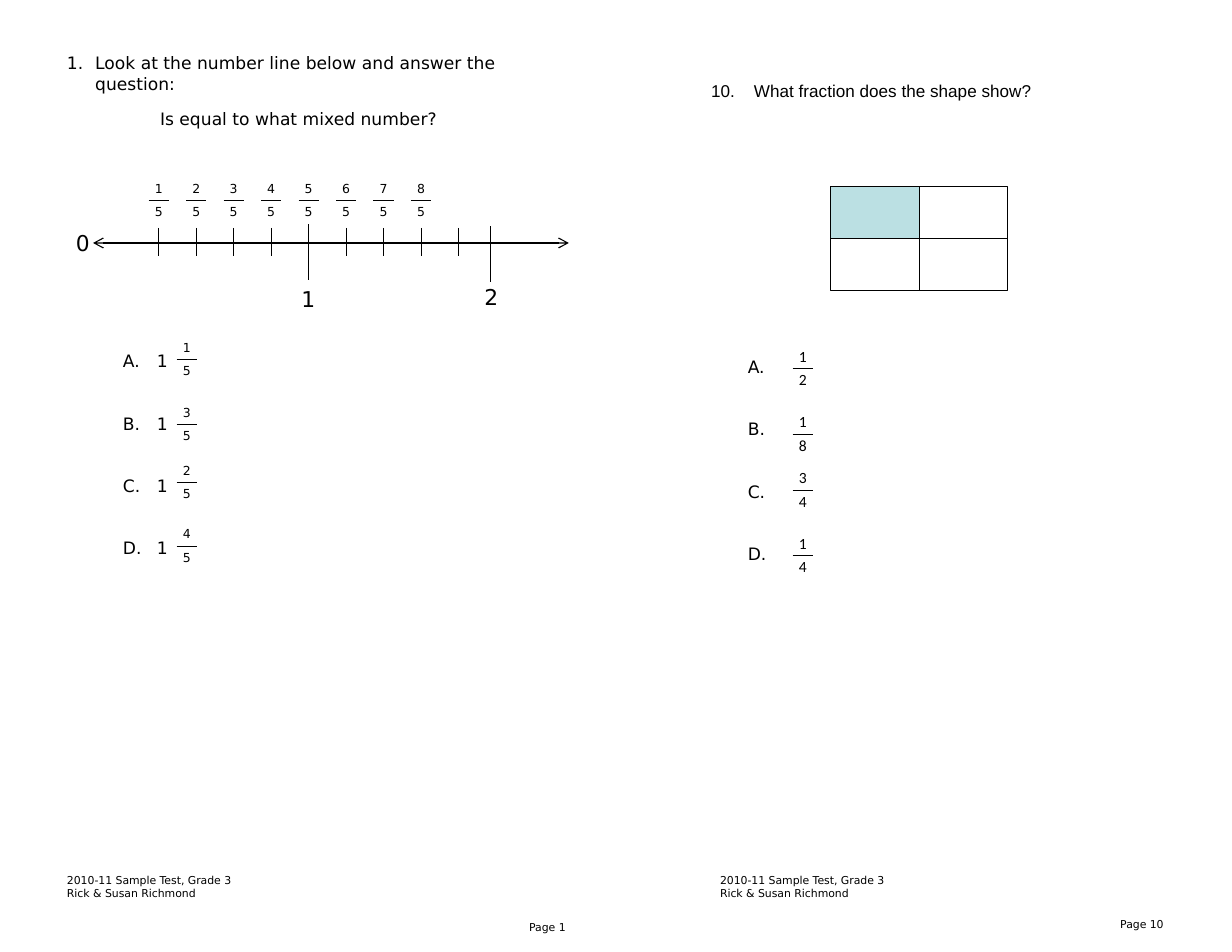
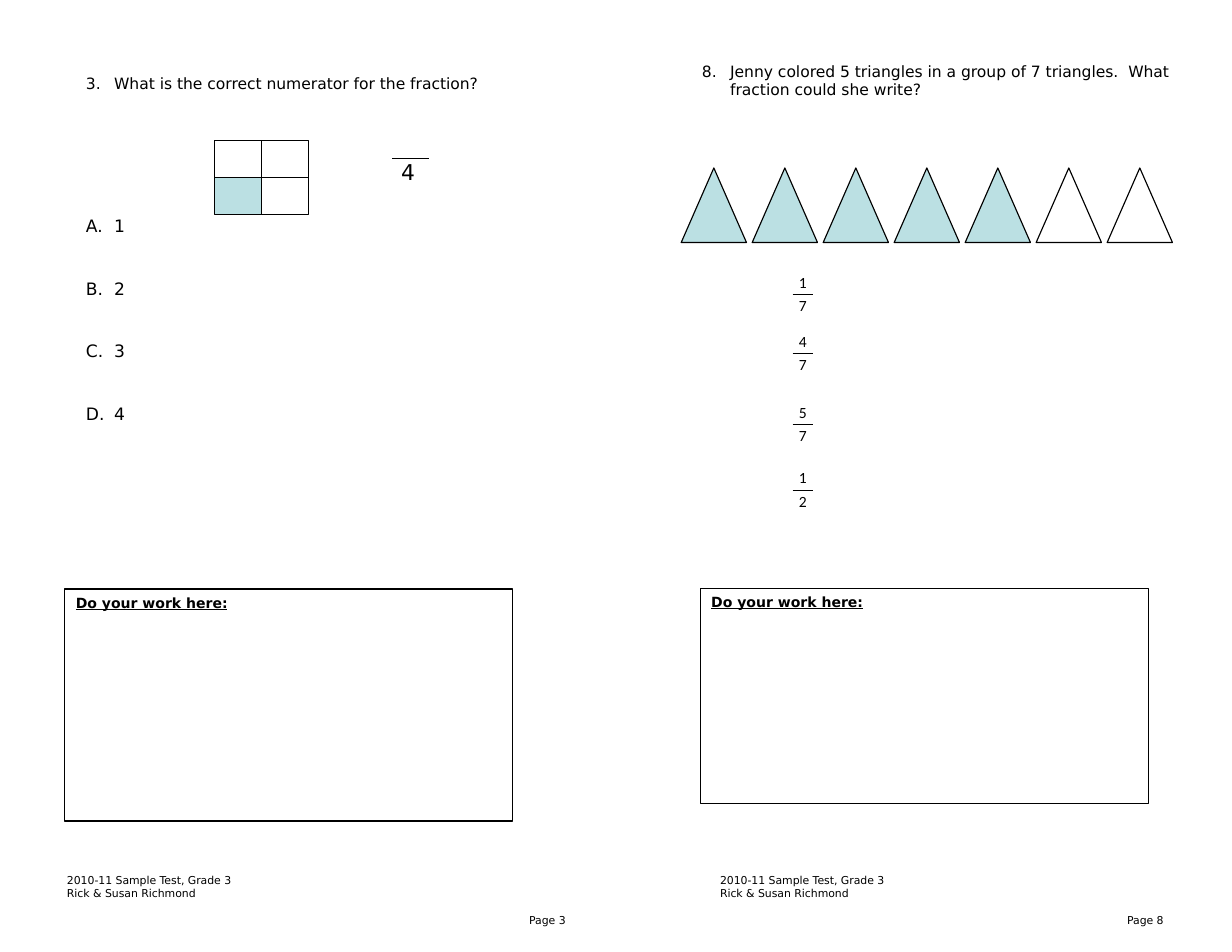
from typing import NamedTuple

from lxml.etree import SubElement
from pptx import Presentation
from pptx.dml.color import RGBColor
from pptx.enum.shapes import MSO_CONNECTOR, MSO_SHAPE
from pptx.enum.text import MSO_ANCHOR, PP_ALIGN
from pptx.oxml.ns import qn
from pptx.shapes.autoshape import Shape
from pptx.shapes.connector import Connector
from pptx.slide import Slide
from pptx.table import _Cell
from pptx.text.text import TextFrame, _Paragraph
from pptx.util import Cm, Pt

BLACK = RGBColor(0x00, 0x00, 0x00)
WHITE = RGBColor(0xFF, 0xFF, 0xFF)
SHADE = RGBColor(0xBB, 0xE0, 0xE3)

MAIN_FONT = "DejaVu Sans"
FRACTION_FONT = "Calibri"
CHOICE_GAP = 0.95
HANGING = 0.64
FOOTER = ["2010-11 Sample Test, Grade 3", "Rick & Susan Richmond"]
FOOTER_LEFTS = (1.27, 16.08)
FRACTION_WIDTH = 0.43
TICK_PITCH = 0.85


class Area(NamedTuple):
    """A rectangle on the page, in centimetres."""
    left: float
    top: float
    width: float
    height: float

    def lengths(self) -> list[Cm]:
        return [Cm(value) for value in self]


class Fraction(NamedTuple):
    left: float
    top: float
    numerator: int
    denominator: int


class PageNumber(NamedTuple):
    area: Area
    number: int


def add_span(para: _Paragraph, text: str, *, size: float, font: str = MAIN_FONT,
             bold: bool = False, underline: bool = False) -> None:
    span = para.add_run()
    span.text = text
    span.font.size = Pt(size)
    span.font.name = font
    span.font.bold = bold
    span.font.underline = underline
    span.font.color.rgb = BLACK


def number_para(para: _Paragraph, scheme: str, *, start: int = 1,
                hanging: float = HANGING) -> None:
    """Give a paragraph an automatic number and a hanging indent."""
    properties = para._p.get_or_add_pPr()
    properties.set("marL", str(Cm(hanging)))
    properties.set("indent", str(-Cm(hanging)))
    bullet = SubElement(properties, qn("a:buAutoNum"), type=scheme)
    if start > 1:
        bullet.set("startAt", str(start))


def add_text(page: Slide, area: Area, lines: list[str], *, size: float,
             font: str = MAIN_FONT, align: PP_ALIGN = PP_ALIGN.LEFT,
             gap: float = 0, left_inset: float = 0.25,
             top_inset: float = 0.13) -> TextFrame:
    frame = page.shapes.add_textbox(*area.lengths()).text_frame
    frame.word_wrap = True
    frame.margin_left = Cm(left_inset)
    frame.margin_top = Cm(top_inset)
    for index, line in enumerate(lines):
        para = frame.add_paragraph() if index else frame.paragraphs[0]
        para.alignment = align
        para.space_after = Cm(gap)
        add_span(para, line, size=size, font=font)
    return frame


def add_question(page: Slide, area: Area, text: str, number: int, *, size: float,
                 font: str = MAIN_FONT, hanging: float = HANGING,
                 top_inset: float = 0.13) -> TextFrame:
    frame = add_text(page, area, [text], size=size, font=font, top_inset=top_inset)
    number_para(frame.paragraphs[0], "arabicPeriod", start=number, hanging=hanging)
    return frame


def add_tab_stop(para: _Paragraph, position: float) -> None:
    tabs = SubElement(para._p.get_or_add_pPr(), qn("a:tabLst"))
    SubElement(tabs, qn("a:tab"), pos=str(Cm(position)), algn="l")


def add_shape(page: Slide, kind: MSO_SHAPE, area: Area,
              fill: RGBColor | None = None) -> Shape:
    shape = page.shapes.add_shape(kind, *area.lengths())
    shape.shadow.inherit = False
    if fill is None:
        shape.fill.background()
    else:
        shape.fill.solid()
        shape.fill.fore_color.rgb = fill
    shape.line.color.rgb = BLACK
    shape.line.width = Pt(0.75)
    return shape


def add_line(page: Slide, start: tuple[float, float],
             end: tuple[float, float]) -> Connector:
    line = page.shapes.add_connector(
        MSO_CONNECTOR.STRAIGHT, *(Cm(value) for value in (*start, *end)))
    line.line.color.rgb = BLACK
    line.line.width = Pt(0.75)
    SubElement(line._element.spPr, qn("a:effectLst"))
    return line


def add_cell_border(cell: _Cell, side: str) -> None:
    border = cell._tc.get_or_add_tcPr().makeelement(
        qn(f"a:{side}"), {"w": str(Pt(0.5))})
    fill = SubElement(border, qn("a:solidFill"))
    SubElement(fill, qn("a:srgbClr"), val=str(BLACK))
    cell._tc.get_or_add_tcPr().insert(0, border)


def add_fraction(page: Slide, fraction: Fraction, *, size: float = 10,
                 font: str = FRACTION_FONT) -> None:
    """Stack two numbers in a table whose inner border is the fraction bar."""
    area = Area(fraction.left, fraction.top, FRACTION_WIDTH, 1.05)
    table = page.shapes.add_table(2, 1, *area.lengths()).table
    table.first_row = False
    table.horz_banding = False
    rows = ((fraction.numerator, 0.53, "lnB"), (fraction.denominator, 0.52, "lnT"))
    for index, (number, height, side) in enumerate(rows):
        table.rows[index].height = Cm(height)
        cell = table.cell(index, 0)
        cell.margin_left = cell.margin_right = cell.margin_top = Cm(0.02)
        cell.margin_bottom = 0
        cell.vertical_anchor = MSO_ANCHOR.MIDDLE
        cell.fill.background()
        add_cell_border(cell, side)
        para = cell.text_frame.paragraphs[0]
        para.alignment = PP_ALIGN.CENTER
        add_span(para, str(number), size=size, font=font)


def add_quarters(page: Slide, first: Area, shaded: tuple[int, int]) -> None:
    """Draw a two by two grid from its first cell, with one (row, column) shaded."""
    for row in range(2):
        for column in range(2):
            cell = first._replace(left=first.left + column * first.width,
                                  top=first.top + row * first.height)
            add_shape(page, MSO_SHAPE.RECTANGLE, cell,
                      SHADE if (row, column) == shaded else None)


def add_work_box(page: Slide, area: Area) -> None:
    frame = add_shape(page, MSO_SHAPE.RECTANGLE, area).text_frame
    frame.word_wrap = True
    frame.vertical_anchor = MSO_ANCHOR.TOP
    para = frame.paragraphs[0]
    para.alignment = PP_ALIGN.LEFT
    add_span(para, "Do your work here:", size=9, bold=True, underline=True)


def add_footers(page: Slide, page_numbers: list[PageNumber]) -> None:
    for left in FOOTER_LEFTS:
        add_text(page, Area(left, 19.69, 4.88, 0.86), FOOTER, size=7)
    for area, number in page_numbers:
        add_text(page, area, [f"Page {number}"], size=7, align=PP_ALIGN.RIGHT)


def add_number_line(page: Slide) -> None:
    axis_top = 5.51
    first_tick = 3.6
    axis = add_line(page, (2.11, axis_top), (12.9, axis_top))
    outline = axis.line._get_or_add_ln()
    for end in ("a:headEnd", "a:tailEnd"):
        SubElement(outline, qn(end), type="arrow")

    for index in range(9):
        left = first_tick + index * TICK_PITCH
        top, bottom = (5.08, 6.35) if index == 4 else (5.17, 5.8)
        add_line(page, (left, top), (left, bottom))
    add_line(page, (11.13, 5.13), (11.13, 6.4))

    for index in range(8):
        left = first_tick - FRACTION_WIDTH / 2 + index * TICK_PITCH
        add_fraction(page, Fraction(left, 4.01, index + 1, 5), size=8, font=MAIN_FONT)

    add_text(page, Area(1.47, 5.08, 0.84, 0.86), ["0"], size=14)
    for left, top, label in ((6.46, 6.35, "1"), (10.61, 6.3, "2")):
        add_text(page, Area(left, top, 1.07, 0.86), [label], size=14,
                 align=PP_ALIGN.CENTER)


def build_mixed_number_page(page: Slide) -> None:
    add_footers(page, [PageNumber(Area(11, 20.75, 2.08, 0.76), 1),
                       PageNumber(Area(24.56, 20.68, 2.08, 0.76), 10)])

    add_question(page, Area(1.27, 1.07, 12.07, 1.19),
                 "Look at the number line below and answer the question:", 1, size=11)
    add_text(page, Area(3.38, 2.34, 8.26, 0.74),
             ["Is equal to what mixed number?"], size=11)
    add_number_line(page)
    choices = add_text(page, Area(2.54, 7.82, 10.16, 4.95),
                       [f"{letter}.\t1" for letter in "ABCD"], size=11, gap=CHOICE_GAP)
    for para in choices.paragraphs:
        add_tab_stop(para, 0.77)
    for top, numerator in ((7.62, 1), (9.1, 3), (10.41, 2), (11.85, 4)):
        add_fraction(page, Fraction(4.02, top, numerator, 5), size=8, font=MAIN_FONT)

    add_question(page, Area(15.88, 1.7, 9.96, 0.74), "What fraction does the shape show?",
                 10, size=11, font="Arial", hanging=0.97)
    add_quarters(page, Area(18.84, 4.23, 2.01, 1.18), shaded=(0, 0))
    add_text(page, Area(16.71, 7.95, 1.9, 4.95), [f"{letter}." for letter in "ABCD"],
             size=11, gap=CHOICE_GAP)
    for top, numerator, denominator in ((7.83, 1, 2), (9.31, 1, 8),
                                        (10.58, 3, 4), (12.07, 1, 4)):
        add_fraction(page, Fraction(17.99, top, numerator, denominator))


def build_numerator_page(page: Slide) -> None:
    add_footers(page, [PageNumber(Area(11, 20.6, 2.08, 0.76), 3),
                       PageNumber(Area(24.56, 20.6, 2.08, 0.81), 8)])
    add_work_box(page, Area(1.47, 13.36, 10.16, 5.26))
    add_work_box(page, Area(15.88, 13.34, 10.16, 4.88))

    frame = add_question(page, Area(1.7, 1.07, 11.23, 9.65),
                         "What is the correct numerator for the fraction?", 3,
                         size=10, top_inset=0.61)
    frame.paragraphs[0].space_after = Cm(2.79)
    for answer in range(1, 5):
        para = frame.add_paragraph()
        para.space_after = Cm(CHOICE_GAP)
        add_span(para, str(answer), size=11)
        number_para(para, "alphaUcPeriod")
    add_quarters(page, Area(4.87, 3.18, 1.06, 0.84), shaded=(1, 0))
    add_line(page, (8.89, 3.6), (9.73, 3.6))
    add_text(page, Area(8.38, 3.48, 1.47, 0.86), ["4"], size=14, left_inset=0.72)

    add_question(page, Area(15.67, 1.27, 11.23, 1.55),
                 "Jenny colored 5 triangles in a group of 7 triangles.  "
                 "What fraction could she write?", 8, size=10)
    for index in range(7):
        add_shape(page, MSO_SHAPE.ISOSCELES_TRIANGLE,
                  Area(15.45 + index * 1.61, 3.81, 1.48, 1.69),
                  SHADE if index < 5 else WHITE)
    for top, numerator, denominator in ((6.14, 1, 7), (7.48, 4, 7),
                                        (9.1, 5, 7), (10.58, 1, 2)):
        add_fraction(page, Fraction(17.99, top, numerator, denominator))


def main() -> None:
    deck = Presentation()
    deck.slide_width = Cm(27.94)
    deck.slide_height = Cm(21.59)
    for build in (build_mixed_number_page, build_numerator_page):
        build(deck.slides.add_slide(deck.slide_layouts[6]))
    deck.save("out.pptx")


if __name__ == "__main__":
    main()
